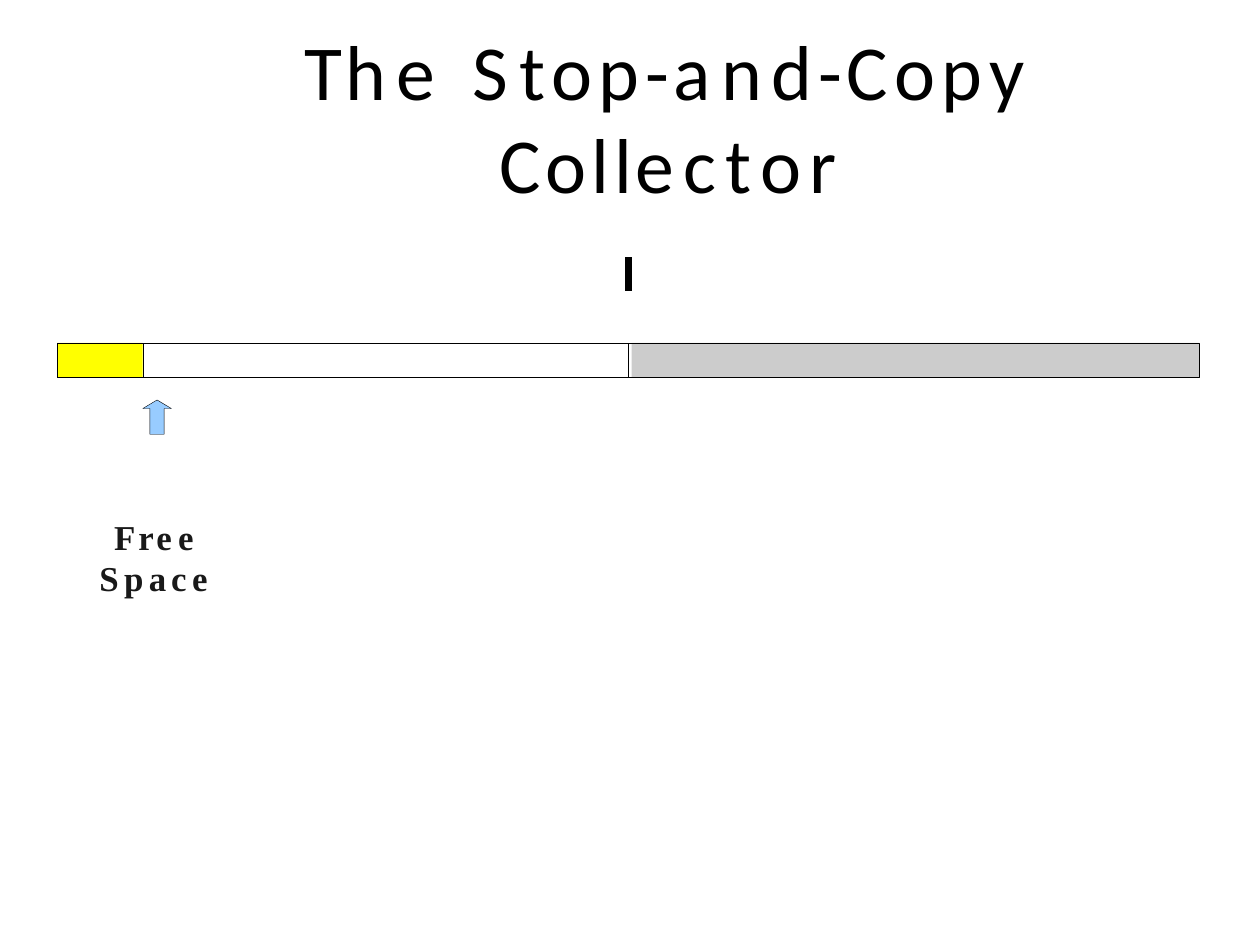
from pptx import Presentation
from pptx.dml.color import RGBColor
from pptx.enum.shapes import MSO_CONNECTOR, MSO_SHAPE
from pptx.enum.text import MSO_ANCHOR, MSO_AUTO_SIZE, PP_ALIGN
from pptx.oxml.ns import qn
from pptx.util import Pt
from lxml.etree import SubElement

PX = 9144  # EMU per px, 100 px to the inch
SLIDE_SIZE = (1103, 826)
COLORS = {"ink": "000000", "label": "191919", "used": "FFFF00",
          "reserved": "CCCCCC", "pointer": "98CCFF"}

# Text pieces with their letter spacing in points
TITLE = [("T", 2.4), ("h", 6.1), ("e ", 6.4), ("S", 7.2), ("t", 3.5),
         ("op", 3.9), ("-", 2.6), ("a", 6.6), ("n", 6.1), ("d", 3.6),
         ("-", 2.5), ("Cop", 4.3), ("y ", 4), ("Col", 3.3), ("l", 1.8),
         ("e", 5.8), ("c", 5.9), ("t", 5.3), ("or", 5.2)]
FREE_SPACE = [("F", 1.8), ("r", 1.6), ("e", 4), ("e ", 4.1), ("Sp", 3.4),
              ("a", 3), ("c", 3.5), ("e", 4.1)]

HEAP_LEFT, HEAP_TOP, HEAP_HEIGHT = 50, 300, 30
HALF_WIDTH, USED_WIDTH, RESERVED_GAP = 500, 75, 3
MIDDLE = HEAP_LEFT + HALF_WIDTH
FREE_START = HEAP_LEFT + USED_WIDTH
DIVIDER_TOP, POINTER_TOP, POINTER_WIDTH = 225, 350, 25

# Heap regions, back to front: left, width, fill, outlined
REGIONS = [
    (HEAP_LEFT, HALF_WIDTH, None, True),
    (MIDDLE + RESERVED_GAP, HALF_WIDTH - RESERVED_GAP, "reserved", False),
    (MIDDLE, HALF_WIDTH, None, True),
    (HEAP_LEFT, USED_WIDTH, "used", True),
]


def emu(*lengths):
    return [length * PX for length in lengths]


def write(shape, pieces, *, font, size, color, bold=False, align=PP_ALIGN.LEFT,
          anchor=MSO_ANCHOR.TOP, margin=0, indent=0, line_spacing=None):
    frame = shape.text_frame
    frame.word_wrap = True
    frame.auto_size = MSO_AUTO_SIZE.NONE
    frame.vertical_anchor = anchor
    frame.margin_left = frame.margin_right = 0
    frame.margin_top = frame.margin_bottom = 0
    paragraph = frame.paragraphs[0]
    paragraph.alignment = align
    if line_spacing:
        paragraph.line_spacing = Pt(line_spacing)
    properties = paragraph._p.get_or_add_pPr()
    properties.set("marL", str(margin * PX))
    properties.set("indent", str(indent * PX))
    for text, spacing in pieces:
        run = paragraph.add_run()
        run.text = text
        run.font.name = font
        run.font.size = Pt(size)
        run.font.bold = bold
        run.font.color.rgb = RGBColor.from_string(COLORS[color])
        run._r.get_or_add_rPr().set("spc", str(round(spacing * 100)))


def add_block(slide, kind, box, fill=None, outlined=True):
    block = slide.shapes.add_shape(kind, *emu(*box))
    block.shadow.inherit = False
    if fill:
        block.fill.solid()
        block.fill.fore_color.rgb = RGBColor.from_string(COLORS[fill])
    else:
        block.fill.background()
    if outlined:
        block.line.color.rgb = RGBColor.from_string(COLORS["ink"])
        block.line.width = Pt(0.25)
    else:
        block.line.fill.background()
    return block


def main():
    deck = Presentation()
    deck.slide_width, deck.slide_height = emu(*SLIDE_SIZE)
    slide = deck.slides.add_slide(deck.slide_layouts[5])

    title = slide.shapes.title
    title.left, title.top, title.width, title.height = emu(55, 19, 993, 165)
    write(title, TITLE, font="Calibri", size=49, color="ink",
          align=PP_ALIGN.CENTER, anchor=MSO_ANCHOR.MIDDLE, margin=66)

    for left, width, fill, outlined in REGIONS:
        add_block(slide, MSO_SHAPE.RECTANGLE,
                  (left, HEAP_TOP, width, HEAP_HEIGHT), fill, outlined)

    divider = slide.shapes.add_connector(
        MSO_CONNECTOR.STRAIGHT,
        *emu(MIDDLE, DIVIDER_TOP, MIDDLE, DIVIDER_TOP + HEAP_HEIGHT))
    divider.line.color.rgb = RGBColor.from_string(COLORS["ink"])
    divider.line.width = Pt(4.3)
    SubElement(divider._element.spPr, qn("a:effectLst"))

    pointer = add_block(slide, MSO_SHAPE.UP_ARROW,
                        (FREE_START, POINTER_TOP, POINTER_WIDTH, HEAP_HEIGHT),
                        "pointer")
    pointer.adjustments[0] = 0.5
    pointer.adjustments[1] = 0.3

    label = slide.shapes.add_textbox(*emu(86, 452, 104, 72))
    write(label, FREE_SPACE, font="Times New Roman", size=22, color="label",
          bold=True, margin=1, indent=13, line_spacing=25.8)

    deck.save("out.pptx")


if __name__ == "__main__":
    main()
